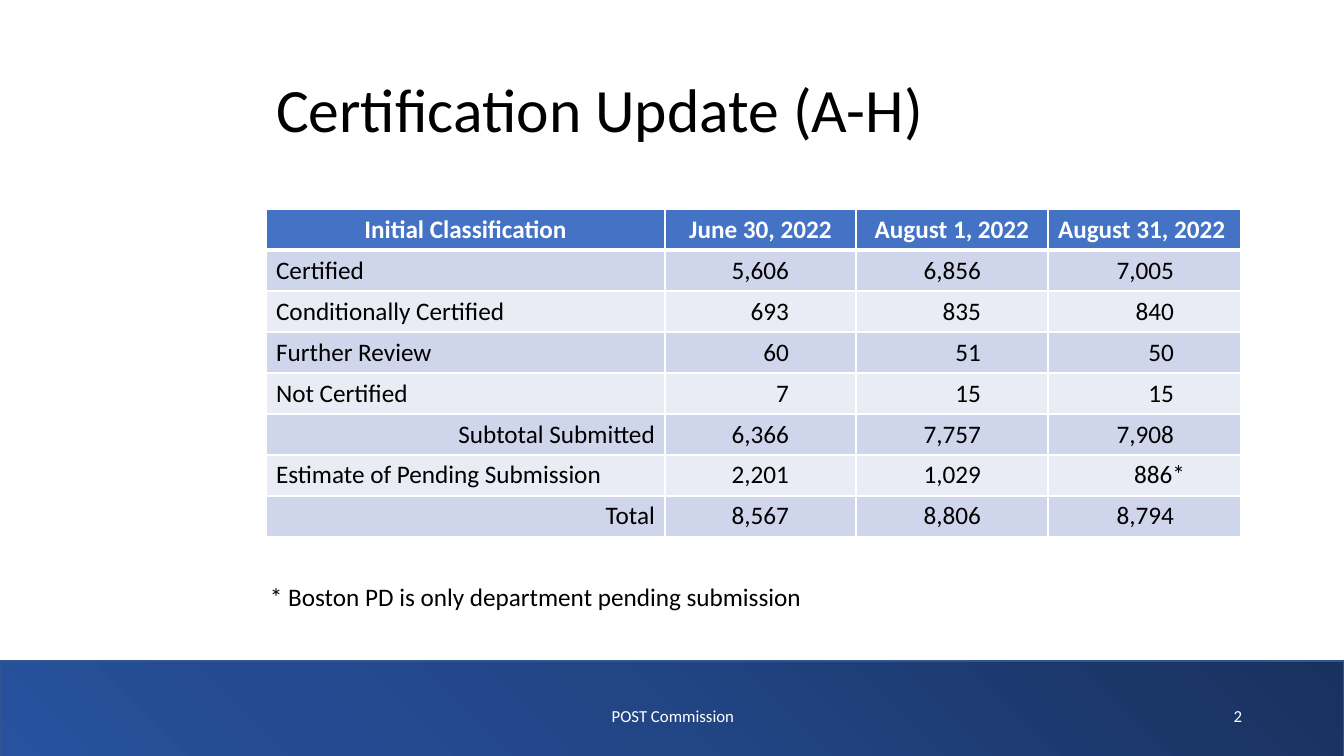
from lxml import etree
from pptx import Presentation
from pptx import util as u
from pptx.dml.color import RGBColor
from pptx.enum import shapes, text
from pptx.oxml import parse_xml
from pptx.oxml.ns import nsdecls, qn

SCALE = 914400 / 100.8
LEFT, CENTER, RIGHT = text.PP_ALIGN.LEFT, text.PP_ALIGN.CENTER, text.PP_ALIGN.RIGHT


def px(*lengths):
    return [u.Emu(round(length * SCALE)) for length in lengths]


def style(para, size, colour, align=LEFT, bold=False):
    para.alignment = align
    para.font.name = "Calibri"
    para.font.size = u.Pt(size)
    para.font.bold = bold
    para.font.color.rgb = RGBColor.from_string(colour)


deck = Presentation()
deck.slide_width, deck.slide_height = px(1344, 756)
page = deck.slides.add_slide(deck.slide_layouts[5])

band = page.shapes.add_shape(shapes.MSO_SHAPE.RECTANGLE, *px(0, 661, 1344, 103))
band.shadow.inherit = False
band.line.color.rgb = RGBColor.from_string("325491")
band.line.width = u.Pt(1)
stops = "".join(
    f'<a:gs pos="{place * 1000}"><a:srgbClr val="{colour}"/></a:gs>'
    for place, colour in [(0, "18315E"), (52, "224585"), (76, "244B91"), (100, "28529E")]
)
gradient = parse_xml(
    f'<a:gradFill {nsdecls("a")} rotWithShape="1"><a:gsLst>{stops}</a:gsLst>'
    '<a:lin ang="8100000" scaled="0"/></a:gradFill>'
)
band.fill.background()
band_properties = band.fill._xPr
band_properties.replace(band_properties.find(qn("a:noFill")), gradient)

title = page.shapes.title
title.left, title.top, title.width, title.height = px(266, 40, 985, 146)
title.text_frame.text = "Certification Update (A-H)"
title.text_frame.vertical_anchor = text.MSO_ANCHOR.MIDDLE
title.text_frame.paragraphs[0].line_spacing = 0.9
style(title.text_frame.paragraphs[0], 44, "000000")

rows = [
    ("Initial Classification", "June 30, 2022", "August 1, 2022", "August 31, 2022"),
    ("Certified", "5,606", "6,856", "7,005"),
    ("Conditionally Certified", "693", "835", "840"),
    ("Further Review", "60", "51", "50"),
    ("Not Certified", "7", "15", "15"),
    ("Subtotal Submitted", "6,366", "7,757", "7,908"),
    ("Estimate of Pending Submission", "2,201", "1,029", "886*"),
    ("Total", "8,567", "8,806", "8,794"),
]
column_widths = px(399, 191, 192, 193)
table = page.shapes.add_table(len(rows), 4, *px(266, 209, 975, 328)).table
for column, width in zip(table.columns, column_widths):
    column.width = width

for row_index, row in enumerate(rows):
    header = row_index == 0
    for column_index, value in enumerate(row):
        cell = table.cell(row_index, column_index)
        cell.text = value
        if header:
            fill, align = "4472C4", LEFT if column_index == 3 else CENTER
        else:
            fill = "CFD5EA" if row_index % 2 else "E9EBF5"
            is_sum = value in ("Subtotal Submitted", "Total")
            align = RIGHT if column_index or is_sum else LEFT
            if column_index:
                cell.margin_right = px(56 if value.endswith("*") else 67)[0]
        style(cell.text_frame.paragraphs[0], 18, "FFFFFF" if header else "000000", align, header)
        properties = cell._tc.get_or_add_tcPr()
        for side in "LRTB":
            thick = (header and side == "B") or (row_index == 1 and side == "T")
            border = etree.SubElement(properties, qn(f"a:ln{side}"), w=str(u.Pt(3 if thick else 1)))
            paint = etree.SubElement(border, qn("a:solidFill"))
            etree.SubElement(paint, qn("a:srgbClr"), val="FFFFFF")
        cell.fill.solid()
        cell.fill.fore_color.rgb = RGBColor.from_string(fill)

labels = [
    ("POST Commission", (446, 696, 454, 40), 12, "FFFFFF", CENTER),
    ("2", (950, 696, 302, 40), 12, "FFFFFF", RIGHT),
    ("* Boston PD is only department pending submission", (260, 576, 625, 40), 18, "000000", LEFT),
]
for words, place, size, colour, align in labels:
    box = page.shapes.add_textbox(*px(*place))
    box.text_frame.word_wrap = True
    box.text_frame.vertical_anchor = text.MSO_ANCHOR.MIDDLE
    box.text_frame.text = words
    style(box.text_frame.paragraphs[0], size, colour, align)

deck.save("out.pptx")
